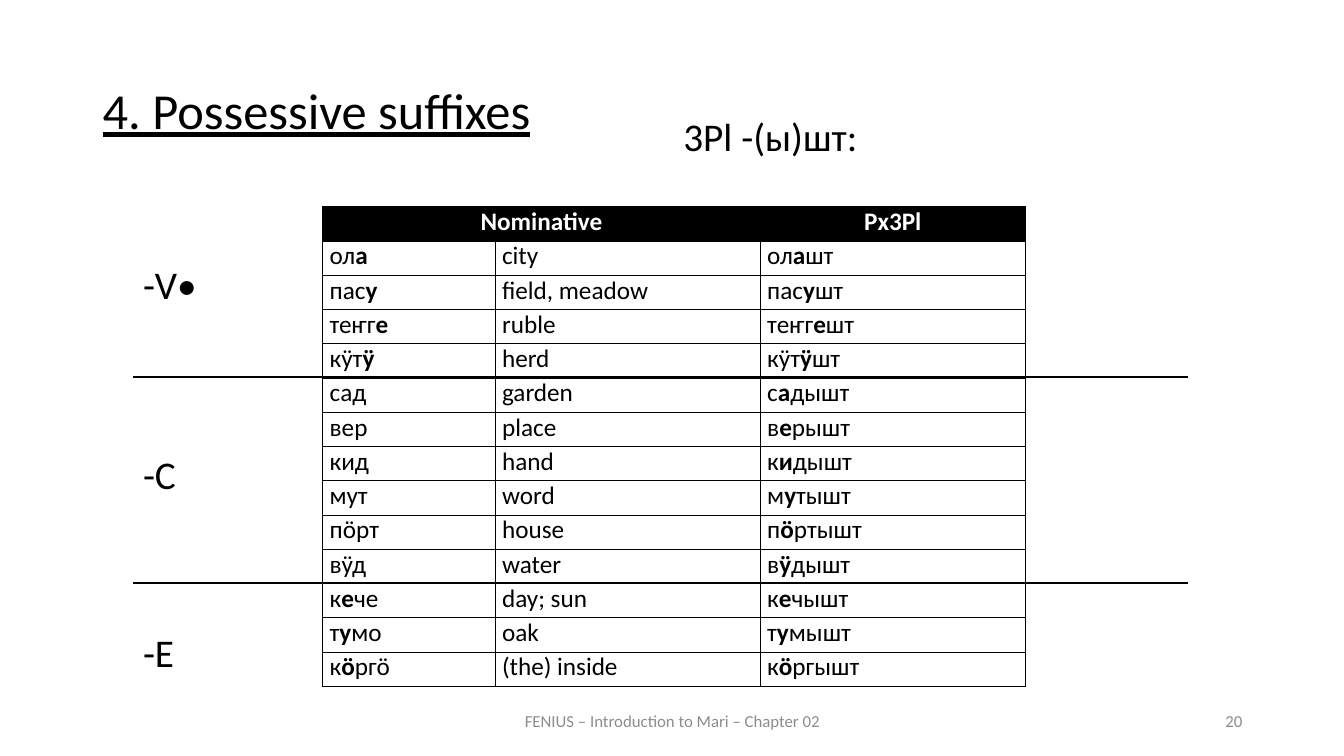
from lxml.etree import SubElement
from pptx import Presentation
from pptx.dml.color import RGBColor
from pptx.enum.shapes import MSO_CONNECTOR
from pptx.enum.text import MSO_ANCHOR, PP_ALIGN
from pptx.oxml.ns import qn
from pptx.util import Inches, Pt

COLORS = {"ink": "000000", "paper": "FFFFFF", "footer": "8C8C8C"}
FONT = "Calibri"

TITLE = "4. Possessive suffixes"
SUFFIX = "3Pl -(ы)шт:"
FOOTER = "FENIUS – Introduction to Mari – Chapter 02"
PAGE = "20"
HEADINGS = ("Nominative", "", "Px3Pl")
WORDS = [
    ("ол*а*", "city", "ол*а*шт"),
    ("пас*у*", "field, meadow", "пас*у*шт"),
    ("теҥг*е*", "ruble", "теҥг*е*шт"),
    ("кӱт*ӱ*", "herd", "кӱт*ӱ*шт"),
    ("сад", "garden", "с*а*дышт"),
    ("вер", "place", "в*е*рышт"),
    ("кид", "hand", "к*и*дышт"),
    ("мут", "word", "м*у*тышт"),
    ("пӧрт", "house", "п*ӧ*ртышт"),
    ("вӱд", "water", "в*ӱ*дышт"),
    ("к*е*че", "day; sun", "к*е*чышт"),
    ("т*у*мо", "oak", "т*у*мышт"),
    ("к*ӧ*ргӧ", "(the) inside", "к*ӧ*ргышт"),
]
STEM_LABELS = [("-V•", 2.59), ("-C", 4.47), ("-Е", 6.24)]
ROWS_ABOVE_DIVIDERS = (5, 11)

TABLE_LEFT, TABLE_TOP, ROW_HEIGHT = 3.2, 2.05, 0.34
COLUMN_WIDTHS = (1.71, 2.63, 2.63)
DIVIDER_LEFT, DIVIDER_RIGHT = 1.32, 11.78


def rgb(name):
    return RGBColor.from_string(COLORS[name])


def style(paragraph, size, color, align):
    paragraph.alignment = align
    paragraph.font.name = FONT
    paragraph.font.size = Pt(size)
    paragraph.font.color.rgb = rgb(color)


def add_text(slide, text, box, size, color="ink", align=PP_ALIGN.LEFT,
             anchor=MSO_ANCHOR.TOP, before=None, underline=None):
    frame = slide.shapes.add_textbox(*map(Inches, box)).text_frame
    frame.word_wrap = True
    frame.vertical_anchor = anchor
    paragraph = frame.paragraphs[0]
    paragraph.add_run().text = text
    style(paragraph, size, color, align)
    paragraph.font.underline = underline
    if before:
        paragraph.line_spacing = 0.9
        paragraph.space_before = Pt(before)


def add_borders(cell):
    properties = cell._tc.get_or_add_tcPr()
    for position, side in enumerate(("lnL", "lnR", "lnT", "lnB")):
        border = SubElement(properties, qn(f"a:{side}"), w=str(Pt(0.5)))
        fill = SubElement(border, qn("a:solidFill"))
        SubElement(fill, qn("a:srgbClr"), val=COLORS["ink"])
        properties.insert(position, border)


def fill_cell(cell, marked_text, is_heading):
    cell.margin_left = cell.margin_right = Inches(0.07)
    cell.margin_top = cell.margin_bottom = 0
    cell.fill.solid()
    cell.fill.fore_color.rgb = rgb("ink" if is_heading else "paper")
    add_borders(cell)
    paragraph = cell.text_frame.paragraphs[0]
    style(paragraph, 18, "paper" if is_heading else "ink",
          PP_ALIGN.CENTER if is_heading else PP_ALIGN.JUSTIFY)
    for index, piece in enumerate(marked_text.split("*")):
        if piece:
            run = paragraph.add_run()
            run.text = piece
            run.font.bold = is_heading or index % 2 == 1


def add_word_table(slide):
    rows = [HEADINGS, *WORDS]
    table = slide.shapes.add_table(
        len(rows), len(COLUMN_WIDTHS), Inches(TABLE_LEFT), Inches(TABLE_TOP),
        Inches(sum(COLUMN_WIDTHS)), Inches(ROW_HEIGHT * len(rows))).table
    table.horz_banding = False
    for column, width in zip(table.columns, COLUMN_WIDTHS):
        column.width = Inches(width)
    for row_index, texts in enumerate(rows):
        table.rows[row_index].height = Inches(ROW_HEIGHT)
        for column_index, text in enumerate(texts):
            fill_cell(table.cell(row_index, column_index), text, row_index == 0)
    table.cell(0, 0).merge(table.cell(0, 1))


def add_divider(slide, rows_above):
    y = Inches(TABLE_TOP + rows_above * ROW_HEIGHT - 0.01)
    divider = slide.shapes.add_connector(
        MSO_CONNECTOR.STRAIGHT, Inches(DIVIDER_LEFT), y, Inches(DIVIDER_RIGHT), y)
    divider.line.color.rgb = rgb("ink")
    divider.line.width = Pt(1.5)
    SubElement(divider._element.spPr, qn("a:effectLst"))


def main():
    deck = Presentation()
    deck.slide_width, deck.slide_height = Inches(13.33), Inches(7.5)
    slide = deck.slides.add_slide(deck.slide_layouts[6])

    add_text(slide, FOOTER, (4.42, 6.95, 4.5, 0.4), 12, "footer",
             PP_ALIGN.CENTER, MSO_ANCHOR.MIDDLE)
    add_text(slide, PAGE, (9.42, 6.95, 3, 0.4), 12, "footer",
             PP_ALIGN.RIGHT, MSO_ANCHOR.MIDDLE)
    add_word_table(slide)
    add_text(slide, TITLE, (0.92, 0.4, 11.5, 1.45), 36,
             anchor=MSO_ANCHOR.MIDDLE, before=12, underline=True)
    add_text(slide, SUFFIX, (6.68, 1.12, 2.4, 0.71), 28, before=10)
    for label, top in STEM_LABELS:
        add_text(slide, label, (DIVIDER_LEFT, top, 1.81, 0.71), 28, before=10)
    for rows_above in ROWS_ABOVE_DIVIDERS:
        add_divider(slide, rows_above)

    deck.save("out.pptx")


if __name__ == "__main__":
    main()
